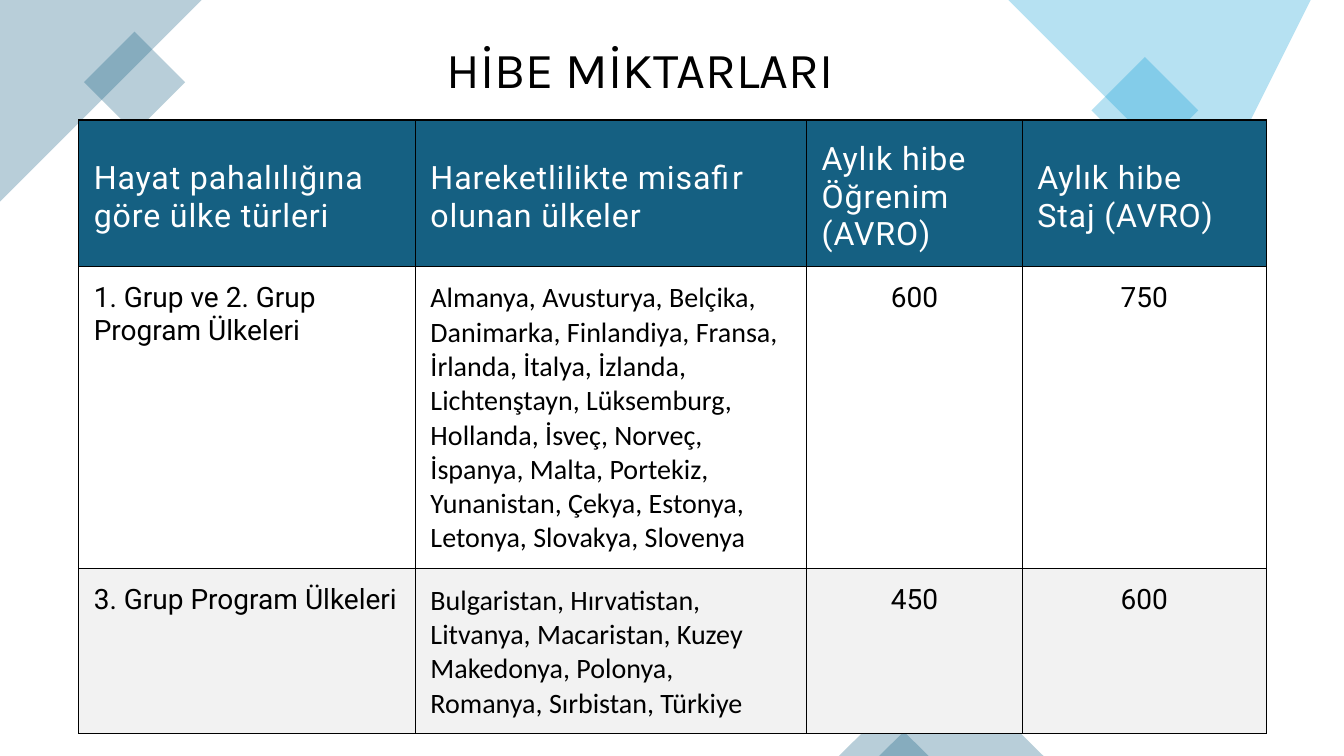
"""Build the grant amounts slide with its country table."""
from lxml.etree import SubElement
from pptx import Presentation
from pptx.dml.color import RGBColor
from pptx.enum.shapes import MSO_SHAPE as Preset
from pptx.enum.text import MSO_ANCHOR as Anchor, PP_ALIGN as Align
from pptx.oxml.ns import qn
from pptx.util import Inches, Pt

TEAL = RGBColor(0x15, 0x60, 0x82)
SKY = RGBColor(0x0F, 0x9E, 0xD5)
BLACK = RGBColor(0, 0, 0)
WHITE = RGBColor(0xFF, 0xFF, 0xFF)
GREY = RGBColor(0xF2, 0xF2, 0xF2)

HEADING = "HİBE MİKTARLARI"
GRANTS = [
    ("Hayat pahalılığına göre ülke türleri",
     "Hareketlilikte misafir olunan ülkeler",
     "Aylık hibe\nÖğrenim (AVRO)",
     "Aylık hibe\nStaj (AVRO)"),
    ("1. Grup ve 2. Grup Program Ülkeleri",
     "Almanya, Avusturya, Belçika, Danimarka, Finlandiya, Fransa, İrlanda, "
     "İtalya, İzlanda, Lichtenştayn, Lüksemburg, Hollanda, İsveç, Norveç, "
     "İspanya, Malta, Portekiz, Yunanistan, Çekya, Estonya, Letonya, "
     "Slovakya, Slovenya",
     "600", "750"),
    ("3. Grup Program Ülkeleri",
     "Bulgaristan, Hırvatistan, Litvanya, Macaristan, Kuzey Makedonya, "
     "Polonya, Romanya, Sırbistan, Türkiye",
     "450", "600"),
]
COLUMN_WIDTHS = [3.34, 3.88, 2.14, 2.42]
ROW_HEIGHTS = [1.45, 3, 1.64]
ROW_FILLS = [TEAL, None, GREY]
COLUMN_FONTS = ["Roboto", "Calibri", "Roboto", "Roboto"]
COLUMN_ALIGNS = [Align.LEFT, Align.LEFT, Align.CENTER, Align.CENTER]

CORNERS = [
    ([(1.53, 0), (0, 0), (0, 1.3), (0.41, 1.71), (1.83, 0.3)], TEAL),
    ([(13.33, 0), (10.23, 0), (11.93, 1.62), (13.33, 0.28)], SKY),
]
ACCENTS = [
    (Preset.RECTANGLE, (0.98, 0.46, 0.71, 0.71), 315, TEAL),
    (Preset.RECTANGLE, (10.98, 0.72, 0.75, 0.75), 315, SKY),
    (Preset.ISOSCELES_TRIANGLE, (8.72, 6.69, 1.63, 0.81), 0, TEAL),
    (Preset.ISOSCELES_TRIANGLE, (8.32, 7.06, 0.89, 0.44), 0, TEAL),
]


def write(frame, text, size, font, color, align=Align.LEFT, spacing=0, leading=None):
    """Fill a text frame, one paragraph per line of text."""
    frame.text = text
    for paragraph in frame.paragraphs:
        paragraph.alignment = align
        paragraph.line_spacing = leading
        for run in paragraph.runs:
            run.font.size = Pt(size)
            run.font.name = font
            run.font.bold = False
            run.font.color.rgb = color
            if spacing:
                run.font._element.set("spc", str(round(spacing * 100)))


def tint(shape, color):
    """Give a shape a 30% opaque fill without line or shadow."""
    shape.shadow.inherit = False
    shape.line.fill.background()
    shape.fill.solid()
    shape.fill.fore_color.rgb = color
    swatch = shape._element.spPr.find(qn("a:solidFill"))[0]
    SubElement(swatch, qn("a:alpha"), val="30000")


def add_borders(cell):
    """Draw a thin black line on each side of a cell."""
    properties = cell._tc.get_or_add_tcPr()
    for side in "LRTB":
        line = SubElement(properties, qn(f"a:ln{side}"), w=str(Pt(1)))
        SubElement(SubElement(line, qn("a:solidFill")), qn("a:srgbClr"), val=str(BLACK))


def add_decoration(slide):
    """Place the translucent corner and edge shapes."""
    for points, color in CORNERS:
        outline = slide.shapes.build_freeform(*points[0], scale=Inches(1))
        outline.add_line_segments(points[1:], close=True)
        tint(outline.convert_to_shape(), color)
    for preset, box, rotation, color in ACCENTS:
        accent = slide.shapes.add_shape(preset, *map(Inches, box))
        accent.rotation = rotation
        tint(accent, color)


def add_grants(slide):
    """Place the table of grants."""
    size = Inches(sum(COLUMN_WIDTHS)), Inches(sum(ROW_HEIGHTS))
    grants = slide.shapes.add_table(
        len(GRANTS), len(COLUMN_WIDTHS), Inches(0.78), Inches(1.19), *size).table
    grants.horz_banding = False
    for column, width in zip(grants.columns, COLUMN_WIDTHS):
        column.width = Inches(width)
    for r, (row, height) in enumerate(zip(grants.rows, ROW_HEIGHTS)):
        row.height = Inches(height)
        for c, cell in enumerate(row.cells):
            cell.margin_left = cell.margin_right = cell.margin_top = Inches(0.15)
            cell.margin_bottom = Inches(0.07)
            add_borders(cell)
            if ROW_FILLS[r] is None:
                cell.fill.background()
            else:
                cell.fill.solid()
                cell.fill.fore_color.rgb = ROW_FILLS[r]
            if r == 0:
                cell.vertical_anchor = Anchor.MIDDLE
                write(cell.text_frame, GRANTS[r][c], 23, "Roboto", WHITE, spacing=0.6)
            else:
                cell.vertical_anchor = Anchor.TOP
                write(cell.text_frame, GRANTS[r][c], 20, COLUMN_FONTS[c], BLACK,
                      align=COLUMN_ALIGNS[c])


def main():
    """Assemble and save the slide."""
    deck = Presentation()
    deck.slide_width, deck.slide_height = Inches(13.33), Inches(7.5)
    slide = deck.slides.add_slide(deck.slide_layouts[5])
    add_decoration(slide)
    add_grants(slide)
    title = slide.shapes.title
    title.left, title.top, title.width, title.height = map(Inches, (2.42, 0.22, 7.86, 1))
    title.text_frame.vertical_anchor = Anchor.MIDDLE
    write(title.text_frame, HEADING, 36, "Karla", BLACK, align=Align.CENTER, leading=0.9)
    deck.save("out.pptx")


if __name__ == "__main__":
    main()
